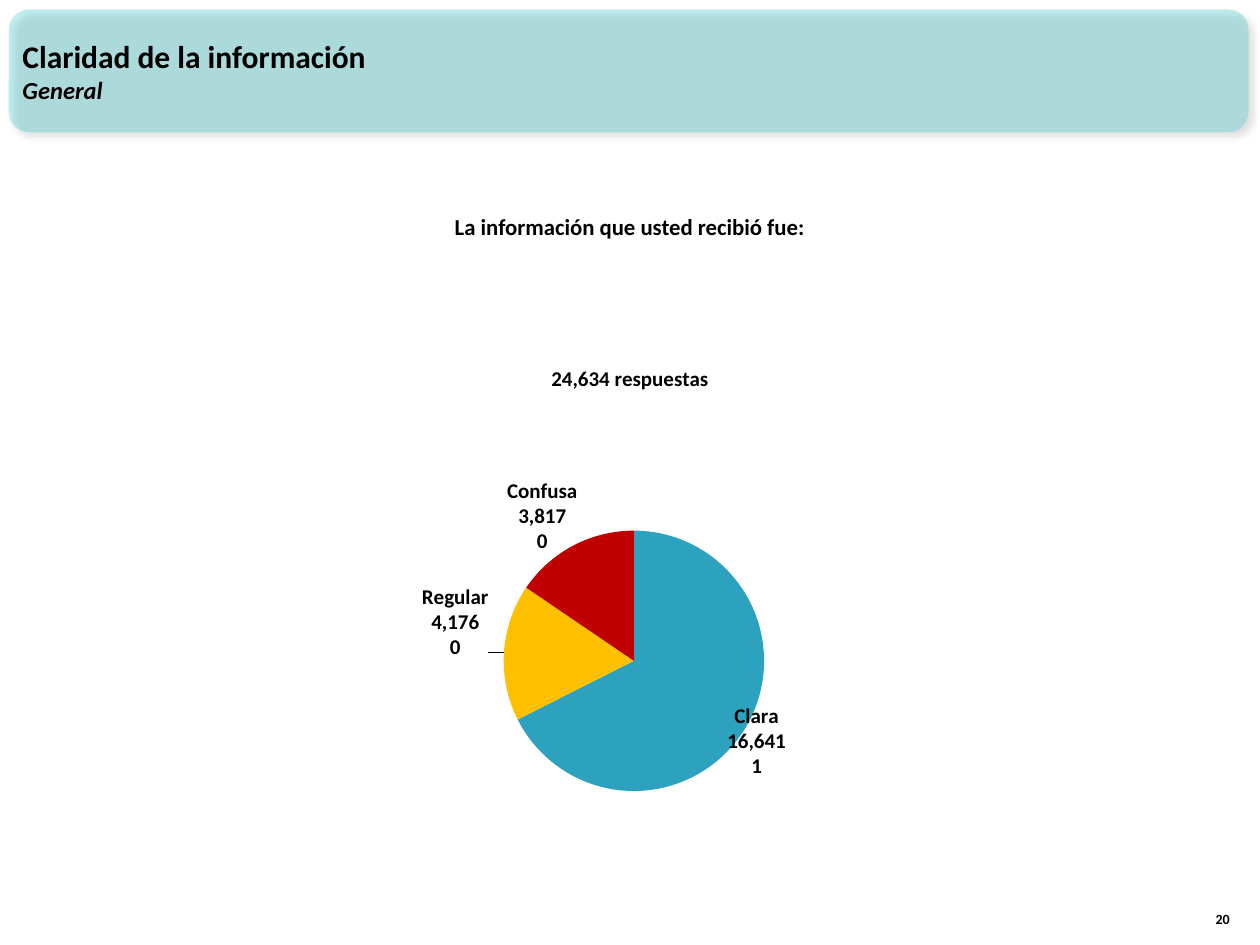
from dataclasses import dataclass

from lxml import etree
from pptx import Presentation
from pptx import util as u
from pptx.chart import data
from pptx.dml.color import RGBColor
from pptx.enum import chart as ch, shapes, text
from pptx.oxml import parse_xml
from pptx.oxml.ns import nsdecls, qn

W, H = u.Inches(10), u.Inches(7.5)


@dataclass(frozen=True)
class Theme:
    """Colours, font and type sizes of the slide."""
    font: str = "Calibri"
    ink: str = "000000"
    banner: str = "33CCCC"
    slices: tuple = ("2DA2BF", "FFC000", "C00000")
    title: int = 18
    subtitle: int = 14
    question: int = 13
    chart: int = 12
    number: int = 8


T = Theme()


def share(x, y, w, h):
    """Turn shares of the slide's size into lengths."""
    return int(x * W), int(y * H), int(w * W), int(h * H)


def style(font, size, **extra):
    """Give a font the theme's look."""
    look = dict(name=T.font, size=u.Pt(size), bold=True, **extra)
    for key, value in look.items():
        setattr(font, key, value)
    font.color.rgb = RGBColor.from_string(T.ink)


def add_text(s, box, lines, align=text.PP_ALIGN.LEFT, anchor=text.MSO_ANCHOR.TOP):
    """Add a text box with one paragraph for each (words, size, format) line."""
    tf = s.shapes.add_textbox(*box).text_frame
    for key, value in dict(word_wrap=True, vertical_anchor=anchor).items():
        setattr(tf, key, value)
    for i, (words, size, extra) in enumerate(lines):
        p = tf.add_paragraph() if i else tf.paragraphs[0]
        p.alignment = align
        r = p.add_run()
        r.text = words
        style(r.font, size, **extra)


def add_banner(s, box):
    """Add the translucent rounded banner with its soft shadow."""
    sp = s.shapes.add_shape(shapes.MSO_SHAPE.ROUNDED_RECTANGLE, *box)
    sp.fill.solid()
    sp.fill.fore_color.rgb = RGBColor.from_string(T.banner)
    sp.line.fill.background()
    color = sp._element.spPr.find(qn("a:solidFill"))[0]
    etree.SubElement(color, qn("a:alpha"), val="30000")
    sp._element.spPr.append(parse_xml(
        f'<a:effectLst {nsdecls("a")}><a:outerShdw blurRad="{u.Pt(4)}" dist="{u.Pt(3)}"'
        f' dir="2700000" algn="tl" rotWithShape="0"><a:srgbClr val="{T.ink}">'
        '<a:alpha val="40000"/></a:srgbClr></a:outerShdw></a:effectLst>'))


def manual_layout(**parts):
    """Build a chart layout element from its settings."""
    inner = "".join(f'<c:{key} val="{value}"/>' for key, value in parts.items())
    return parse_xml(f'<c:layout {nsdecls("c")}><c:manualLayout>{inner}'
                     '</c:manualLayout></c:layout>')


def add_label(series, i, offset):
    """Label one slice with name, value and percentage, moved by an offset."""
    label = series.points[i].data_label
    style(label.font, T.chart)
    label.position = ch.XL_LABEL_POSITION.OUTSIDE_END
    el = series.data_labels._element.findall(qn("c:dLbl"))[i]
    el.insert(1, manual_layout(x=offset[0], y=offset[1]))
    el.insert(2, parse_xml(f'<c:numFmt {nsdecls("c")} formatCode="#,##0" sourceLinked="0"/>'))
    for name in ("showVal", "showCatName", "showPercent"):
        el.find(qn("c:" + name)).set("val", "1")
    etree.SubElement(el, qn("c:separator")).text = "\n"


def add_pie(s, box):
    """Add the pie of answers with its title and labels."""
    cd = data.CategoryChartData(number_format="#,##0")
    cd.categories = ["Clara", "Regular", "Confusa"]
    cd.add_series("24,634 respuestas", (16641, 4176, 3817))
    chart = s.shapes.add_chart(ch.XL_CHART_TYPE.PIE, *box, cd).chart
    style(chart.font, T.chart)
    chart.has_legend = False
    chart.has_title = True
    r = chart.chart_title.text_frame.paragraphs[0].add_run()
    r.text = "24,634 respuestas"
    style(r.font, T.chart)
    for overlay in chart.chart_title._element.findall(qn("c:overlay")):
        overlay.set("val", "1")

    plot = chart.plots[0]
    plot.vary_by_categories = True
    series = plot.series[0]
    labels = series.data_labels
    style(labels.font, T.chart)
    shown = dict(show_value=True, show_percentage=True, show_category_name=True,
                 number_format="#,##0", number_format_is_linked=False)
    for key, value in shown.items():
        setattr(labels, key, value)
    offsets = ((-0.03, -0.06), (-0.01, -0.06), (0.01, 0.03))
    for i, (color, offset) in enumerate(zip(T.slices, offsets)):
        fill = series.points[i].format.fill
        fill.solid()
        fill.fore_color.rgb = RGBColor.from_string(color)
        add_label(series, i, offset)

    area = chart._chartSpace.chart.plotArea
    for old in area.findall(qn("c:layout")):
        area.remove(old)
    area.insert(0, manual_layout(layoutTarget="inner", xMode="edge", yMode="edge",
                                 x=0.23, y=0.38, w=0.55, h=0.53))


def main():
    """Build and save the slide."""
    prs = Presentation()
    prs.slide_width, prs.slide_height = W, H
    s = prs.slides.add_slide(prs.slide_layouts[6])
    add_banner(s, share(0.007, 0.01, 0.984, 0.13))
    add_text(s, share(0.946, 0.935, 0.04, 0.053), [("20", T.number, {})],
             text.PP_ALIGN.RIGHT, text.MSO_ANCHOR.BOTTOM)
    add_pie(s, share(0.185, 0.364, 0.63, 0.52))
    add_text(s, share(0.089, 0.219, 0.821, 0.043),
             [("La información que usted recibió fue:", T.question, {})],
             text.PP_ALIGN.CENTER)
    add_text(s, share(0.008, 0.012, 0.917, 0.125),
             [("Claridad de la información", T.title, {}),
              ("General", T.subtitle, dict(italic=True))],
             anchor=text.MSO_ANCHOR.MIDDLE)
    prs.save("out.pptx")


if __name__ == "__main__":
    main()
